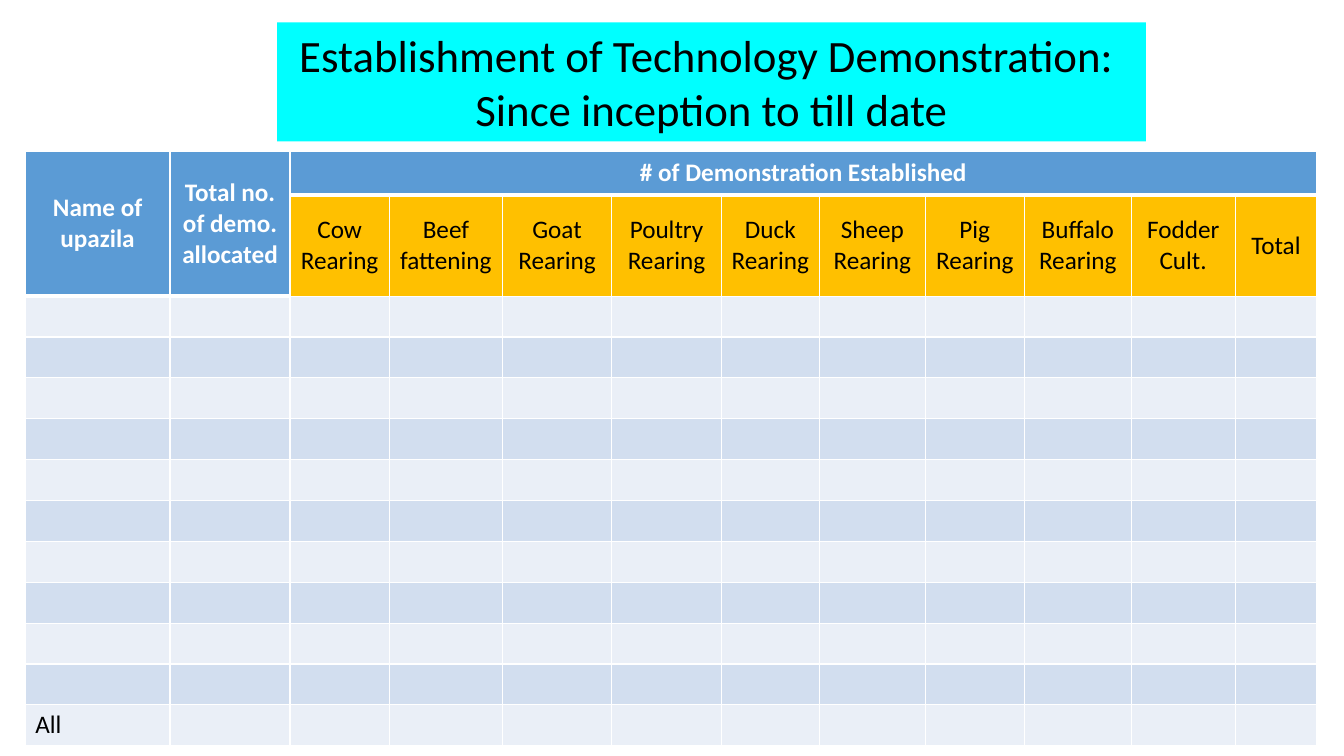
from dataclasses import dataclass

from lxml import etree
from pptx import Presentation
from pptx.dml.color import RGBColor
from pptx.enum.text import MSO_ANCHOR, MSO_AUTO_SIZE, PP_ALIGN
from pptx.oxml.ns import qn
from pptx.util import Pt

TITLE = ["Establishment of Technology Demonstration: ",
         "Since inception to till date"]
HEADS = ["Name of upazila", "Total no. of demo. allocated",
         "# of Demonstration Established"]
KINDS = ["Cow Rearing", "Beef fattening", "Goat Rearing", "Poultry Rearing",
         "Duck Rearing", "Sheep Rearing", "Pig Rearing", "Buffalo Rearing",
         "Fodder Cult.", "Total"]
BLANKS = 10
LAST = "All"

WIDTHS = [103.5, 85.7, 70.9, 80.9, 77.9, 78.5, 69.9, 75.8, 70.6, 76.5, 74.2, 58.3]
HEIGHTS = [31.5, 50.4] + [29.2] * (BLANKS + 1)

CENTER, LEFT = PP_ALIGN.CENTER, PP_ALIGN.LEFT
MIDDLE, TOP = MSO_ANCHOR.MIDDLE, MSO_ANCHOR.TOP
GROW = MSO_AUTO_SIZE.SHAPE_TO_FIT_TEXT


@dataclass(frozen=True)
class Theme:
    font: str = "Calibri"
    large: int = 32
    small: int = 18
    black: str = "000000"
    white: str = "FFFFFF"
    cyan: str = "00FFFF"
    blue: str = "5B9BD5"
    gold: str = "FFC000"
    bands: tuple = ("EAEFF7", "D2DEEF")
    thin: int = 1
    thick: int = 3


THEME = Theme()


def paint(item, color):
    item.fill.solid()
    item.fill.fore_color.rgb = RGBColor.from_string(color)


def style(para, size, color, bold=False, align=CENTER):
    para.alignment = align
    font = para.font
    font.name, font.size, font.bold = THEME.font, Pt(size), bold
    font.color.rgb = RGBColor.from_string(color)


def edge(cell, top, bottom):
    """Draw white borders; the sides are thin."""
    props = cell._tc.get_or_add_tcPr()
    sides = {"L": THEME.thin, "R": THEME.thin, "T": top, "B": bottom}
    for side, width in sides.items():
        line = etree.SubElement(props, qn(f"a:ln{side}"), w=str(Pt(width)))
        fill = etree.SubElement(line, qn("a:solidFill"))
        etree.SubElement(fill, qn("a:srgbClr"), val=THEME.white)


def rule(row, col):
    """Give the width of the line under a cell."""
    heavy = row == 1 if col < 2 else row == 0
    return THEME.thick if heavy else THEME.thin


def look(row, col):
    """Give fill, text colour, bold, alignment and anchor of a cell."""
    if row == 0 or row == 1 and col < 2:
        return THEME.blue, THEME.white, True, CENTER, MIDDLE
    if row == 1:
        return THEME.gold, THEME.black, False, CENTER, MIDDLE
    return THEME.bands[row % 2], THEME.black, False, LEFT, TOP


def add_title(slide):
    title = slide.shapes.title
    title.left, title.top, title.width, title.height = map(Pt, (198, 16, 620.6, 85))
    paint(title, THEME.cyan)
    frame = title.text_frame
    frame.text = "\n".join(TITLE)
    frame.word_wrap, frame.auto_size = True, GROW
    for para in frame.paragraphs:
        style(para, THEME.large, THEME.black)


def add_grid(slide):
    count = len(WIDTHS)
    rows = [HEADS + [""] * (count - len(HEADS)), ["", ""] + KINDS]
    rows += [[""] * count for _ in range(BLANKS)]
    rows.append([LAST] + [""] * (count - 1))
    table = slide.shapes.add_table(
        len(rows), count, Pt(18), Pt(108), Pt(sum(WIDTHS)), Pt(sum(HEIGHTS))).table
    for col, width in zip(table.columns, WIDTHS):
        col.width = Pt(width)
    for row, height in zip(table.rows, HEIGHTS):
        row.height = Pt(height)
    for r, texts in enumerate(rows):
        for c, text in enumerate(texts):
            cell = table.cell(r, c)
            cell.text = text
            fill, color, bold, align, anchor = look(r, c)
            edge(cell, rule(r - 1, c), rule(r, c))
            paint(cell, fill)
            cell.vertical_anchor = anchor
            style(cell.text_frame.paragraphs[0], THEME.small, color, bold, align)
    for c in (0, 1):
        table.cell(0, c).merge(table.cell(1, c))
    table.cell(0, 2).merge(table.cell(0, count - 1))


def main():
    deck = Presentation()
    deck.slide_width, deck.slide_height = Pt(960), Pt(540)
    slide = deck.slides.add_slide(deck.slide_layouts[5])
    add_title(slide)
    add_grid(slide)
    deck.save("out.pptx")


if __name__ == "__main__":
    main()
